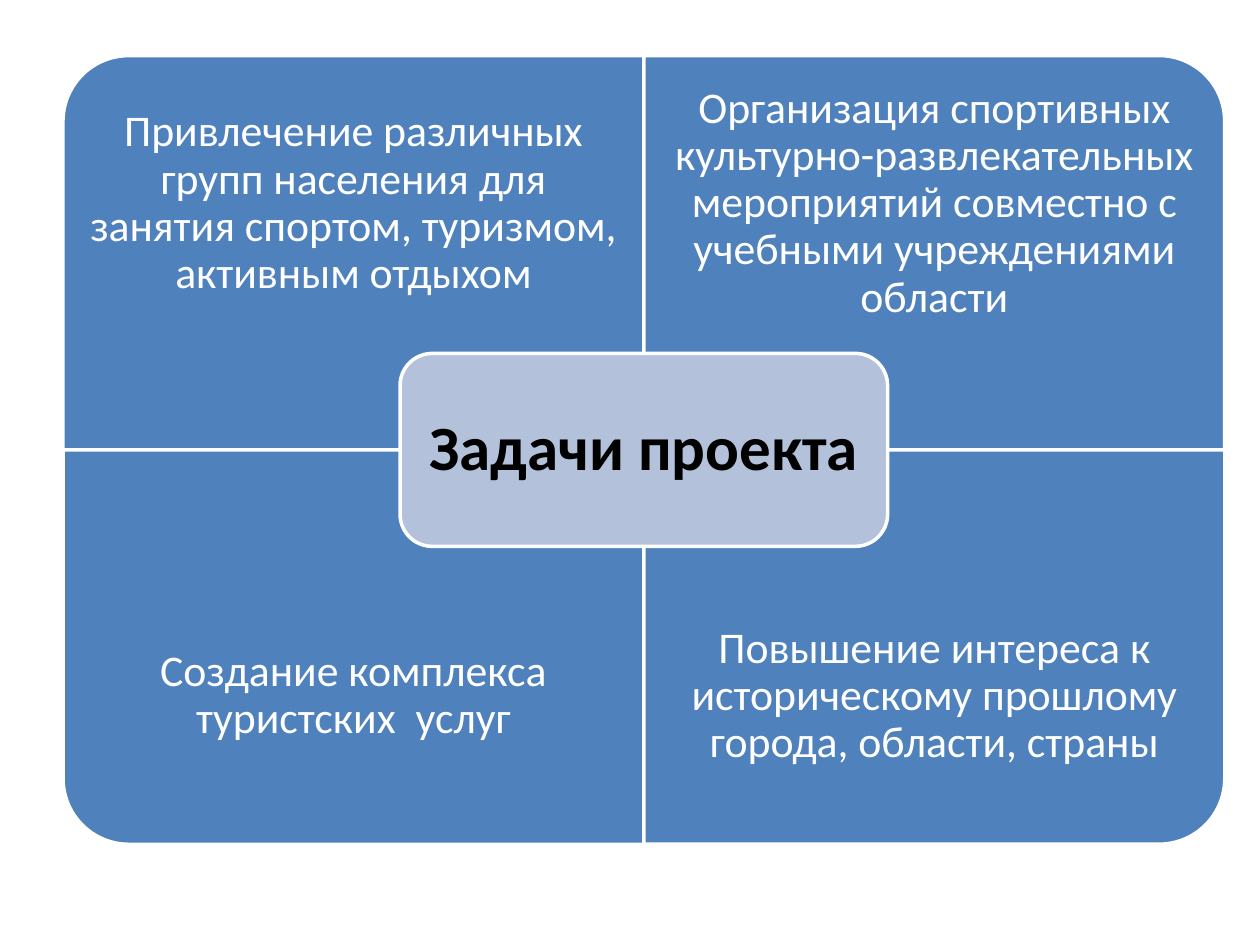
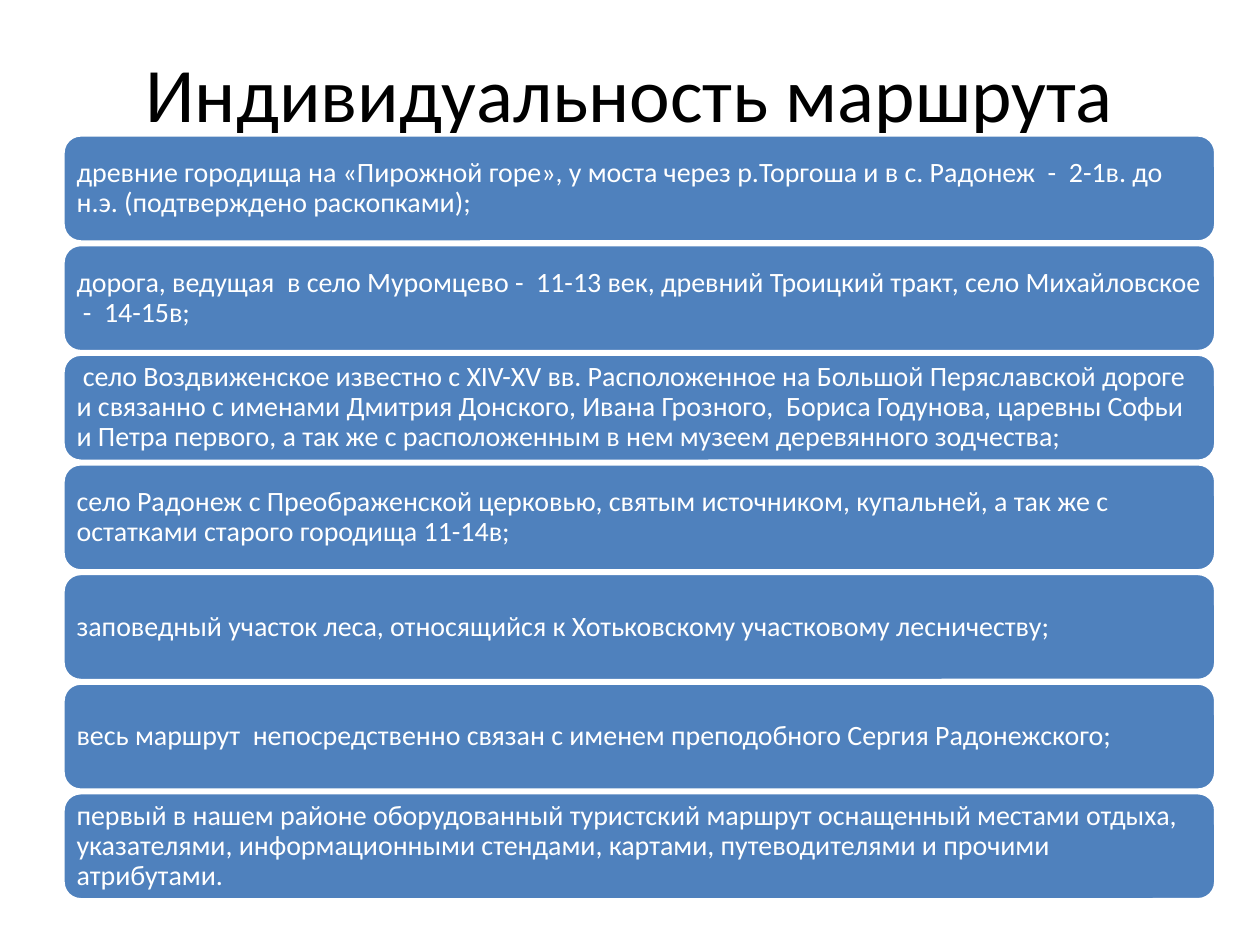
import dataclasses

import pptx
import pptx.dml.color
import pptx.enum.shapes
import pptx.enum.text
import pptx.util

Cm = pptx.util.Cm
Pt = pptx.util.Pt
Kind = pptx.enum.shapes.MSO_SHAPE
Align = pptx.enum.text.PP_ALIGN


@dataclasses.dataclass(frozen=True)
class Theme:
    font: str = "Calibri"
    blue: str = "4F81BD"
    pale: str = "B3C1DB"
    white: str = "FFFFFF"
    black: str = "000000"
    edge: float = 2
    title: float = 44
    hub: float = 36
    task: float = 25
    fact: float = 16
    left: float = 1.27


THEME = Theme()

TASKS = [
    "Привлечение различных групп населения для занятия спортом, туризмом, активным отдыхом",
    "Организация спортивных культурно-развлекательных мероприятий совместно с учебными учреждениями области",
    "Создание комплекса туристских  услуг",
    "Повышение интереса к историческому прошлому города, области, страны",
]

FACTS = [
    "древние городища на «Пирожной горе», у моста через р.Торгоша и в с. Радонеж  -  2-1в. до н.э. (подтверждено раскопками);",
    "дорога, ведущая  в село Муромцево -  11-13 век, древний Троицкий тракт, село Михайловское  -  14-15в;",
    " село Воздвиженское известно с XIV-XV вв. Расположенное на Большой Перяславской дороге и связанно с именами Дмитрия Донского, Ивана Грозного,  Бориса Годунова, царевны Софьи и Петра первого, а так же с расположенным в нем музеем деревянного зодчества;",
    "село Радонеж с Преображенской церковью, святым источником, купальней, а так же с остатками старого городища 11-14в;",
    "заповедный участок леса, относящийся к Хотьковскому участковому лесничеству;",
    "весь маршрут  непосредственно связан с именем преподобного Сергия Радонежского;",
    "первый в нашем районе оборудованный туристский маршрут оснащенный местами отдыха, указателями, информационными стендами, картами, путеводителями и прочими атрибутами.",
]


def color(code):
    return pptx.dml.color.RGBColor.from_string(code)


def place(shape, left, top, width, height):
    shape.left, shape.top = Cm(left), Cm(top)
    shape.width, shape.height = Cm(width), Cm(height)


def write(shape, text, size, ink, align=Align.CENTER, inset=0.25, lead=0.9, bold=False):
    frame = shape.text_frame
    frame.word_wrap = True
    frame.auto_size = pptx.enum.text.MSO_AUTO_SIZE.NONE
    frame.vertical_anchor = pptx.enum.text.MSO_ANCHOR.MIDDLE
    frame.margin_left = frame.margin_right = Cm(inset)
    frame.margin_top = frame.margin_bottom = Cm(inset)
    para = frame.paragraphs[0]
    para.alignment = align
    para.line_spacing = lead
    run = para.add_run()
    run.text = text
    run.font.name = THEME.font
    run.font.size = Pt(size)
    run.font.bold = bold
    run.font.color.rgb = color(ink)


def panel(slide, kind, left, top, width, height, fill, turn=0):
    shape = slide.shapes.add_shape(kind, 0, 0, 0, 0)
    if turn % 180:
        shift = (width - height) / 2
        place(shape, left + shift, top - shift, height, width)
    else:
        place(shape, left, top, width, height)
    shape.rotation = turn
    shape.shadow.inherit = False
    shape.fill.solid()
    shape.fill.fore_color.rgb = color(fill)
    shape.line.color.rgb = color(THEME.white)
    shape.line.width = Pt(THEME.edge)
    return shape


def label(slide, text, left, top, width, height):
    box = slide.shapes.add_textbox(0, 0, 0, 0)
    place(box, left, top, width, height)
    write(box, text, THEME.task, THEME.white, inset=0.48)


def heading(slide, text):
    title = slide.shapes.title
    place(title, THEME.left, 0.76, 22.86, 2.16)
    write(title, text, THEME.title, THEME.black, lead=1.0)


def matrix(slide, tasks, hub):
    top, width, height, depth = 1.12, 11.71, 7.95, 5.97
    turns = [270, 0, 180, 90]
    for index, (task, turn) in enumerate(zip(tasks, turns)):
        row, col = divmod(index, 2)
        x, y = THEME.left + col * width, top + row * height
        panel(slide, Kind.ROUND_1_RECTANGLE, x, y, width, height, THEME.blue, turn)
        label(slide, task, x, y + row * (height - depth), width, depth)
    wide, high = 9.83, 3.89
    core = panel(slide, Kind.ROUNDED_RECTANGLE, THEME.left + width - wide / 2,
                 top + height - high / 2, wide, high, THEME.pale)
    write(core, hub, THEME.hub, THEME.black, inset=0.38, bold=True)


def stack(slide, facts):
    top, width, height, gap = 2.72, 23.24, 2.16, 0.05
    for index, fact in enumerate(facts):
        bar = panel(slide, Kind.ROUNDED_RECTANGLE, THEME.left,
                    top + index * (height + gap), width, height, THEME.blue)
        write(bar, fact, THEME.fact, THEME.white, Align.LEFT, inset=0.17)


def main():
    deck = pptx.Presentation()
    deck.slide_width, deck.slide_height = Cm(25.4), Cm(19.05)
    goals = deck.slides.add_slide(deck.slide_layouts[6])
    matrix(goals, TASKS, "Задачи проекта")
    route = deck.slides.add_slide(deck.slide_layouts[5])
    heading(route, "Индивидуальность маршрута")
    stack(route, FACTS)
    deck.save("out.pptx")


if __name__ == "__main__":
    main()
